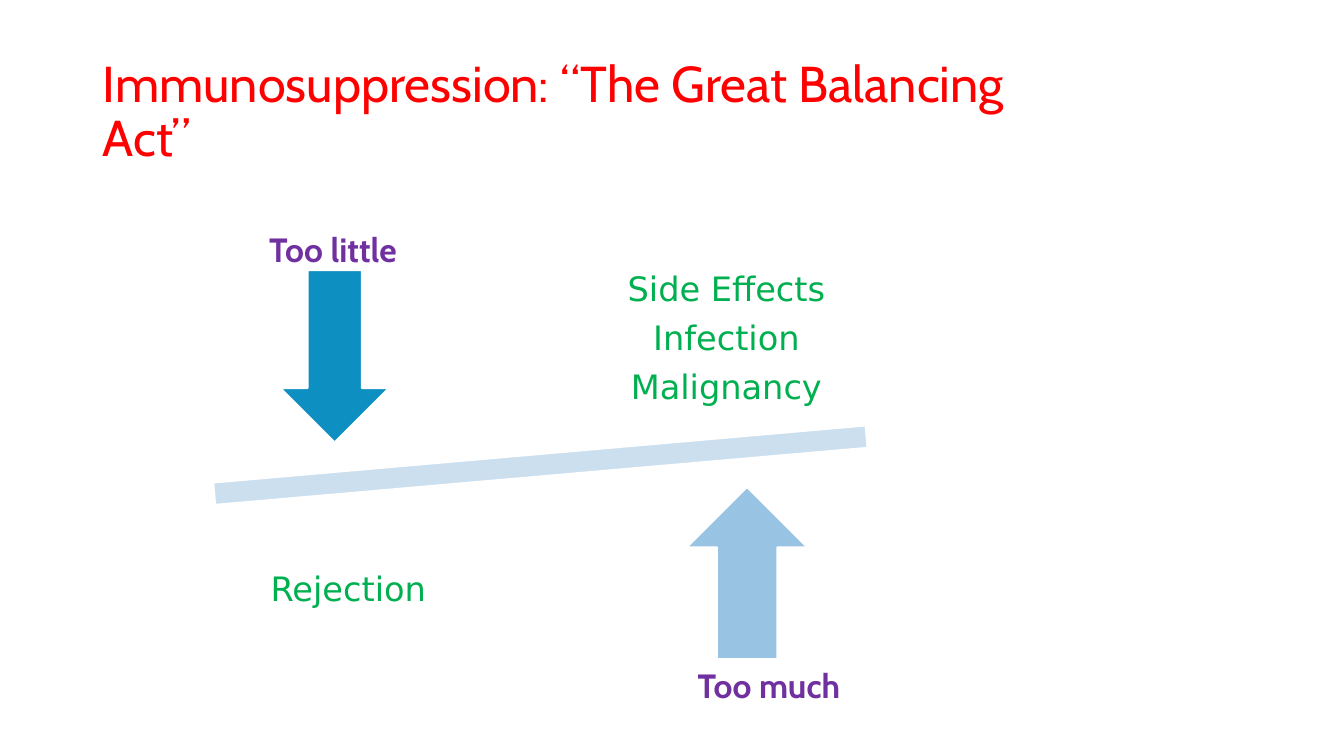
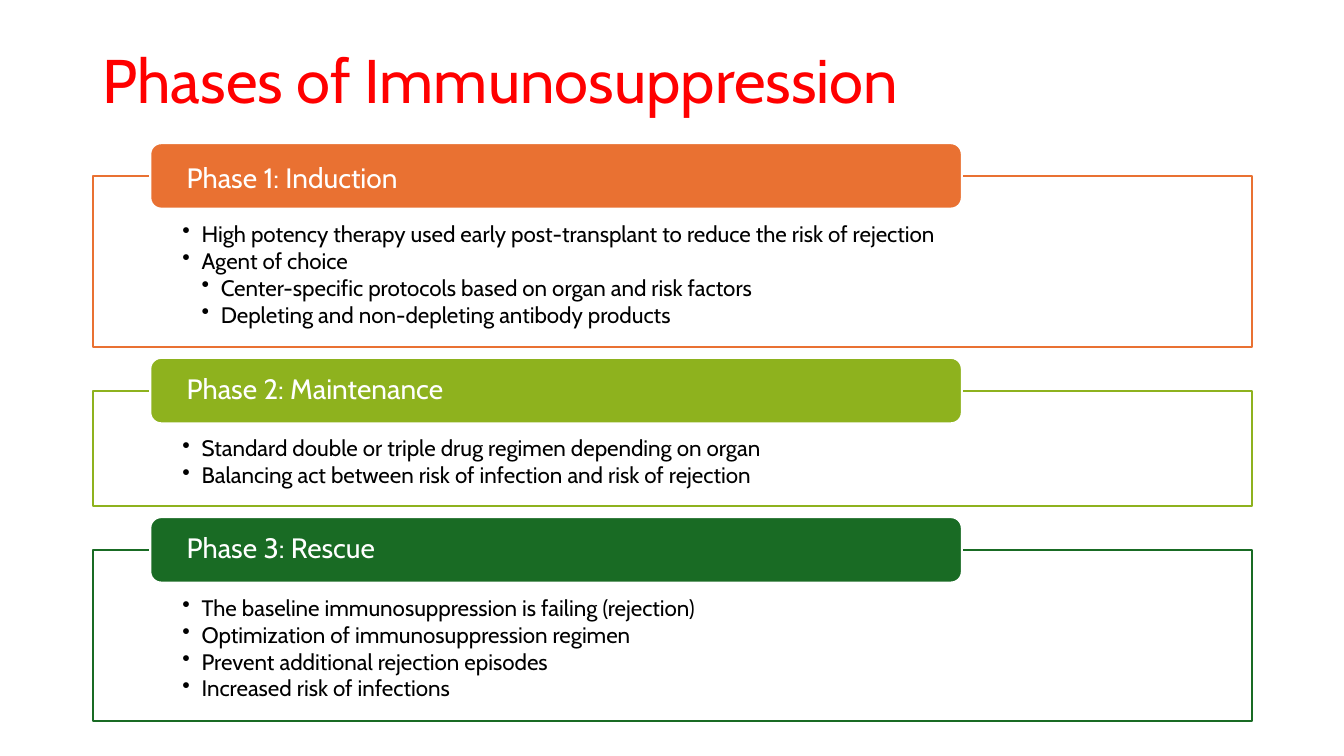
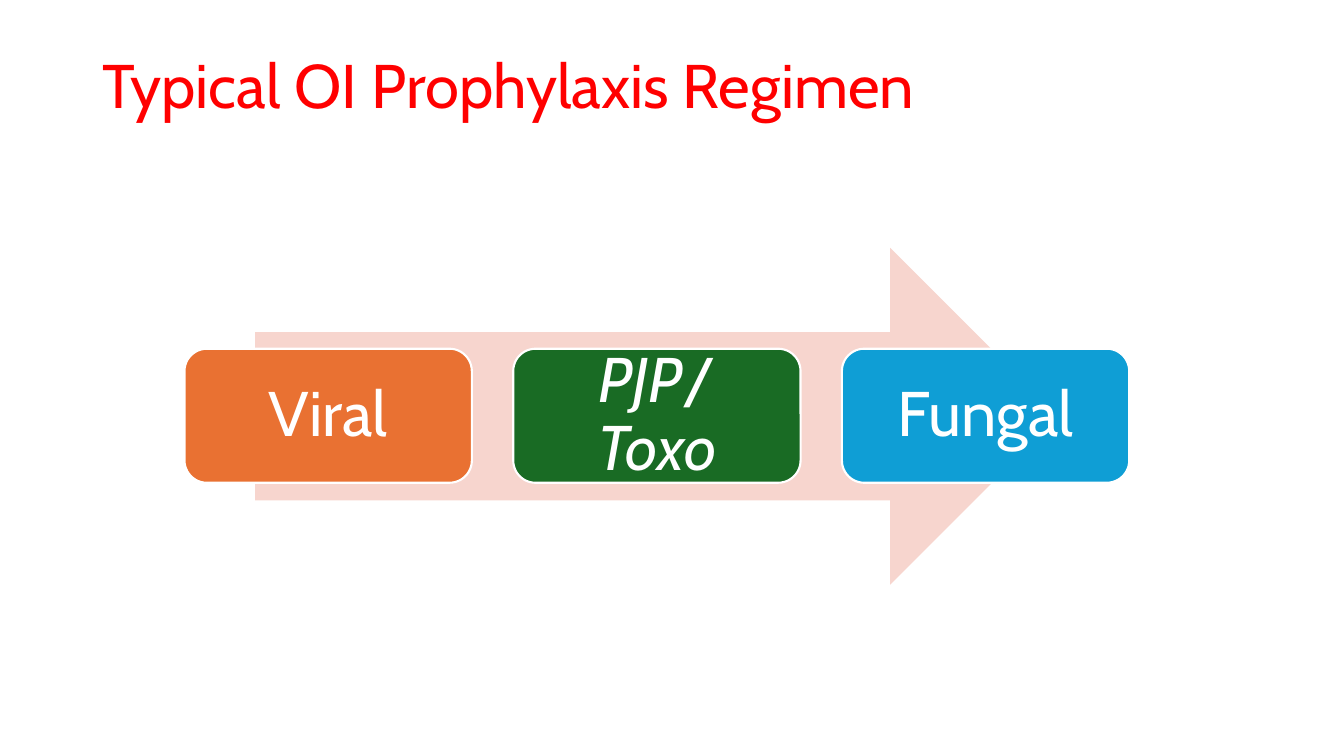
from lxml import etree
from pptx import Presentation
from pptx import util as u
from pptx.dml.color import RGBColor
from pptx.enum import shapes, text
from pptx.oxml import ns

PX = 9144
SLIDE_W, SLIDE_H = 1333, 750
RED = RGBColor(0xFF, 0x00, 0x00)
WHITE = RGBColor(0xFF, 0xFF, 0xFF)
BLACK = RGBColor(0x00, 0x00, 0x00)
GREEN = RGBColor(0x00, 0xB0, 0x50)
PURPLE = RGBColor(0x70, 0x30, 0xA0)
ORANGE = RGBColor(0xE9, 0x71, 0x32)
LIME = RGBColor(0x8E, 0xB2, 0x1E)
FOREST = RGBColor(0x19, 0x6B, 0x24)
SKY = RGBColor(0x0F, 0x9E, 0xD5)
DEEP_BLUE = RGBColor(0x0E, 0x8F, 0xC1)
SOFT_BLUE = RGBColor(0x98, 0xC3, 0xE2)
PALE_BLUE = RGBColor(0xCC, 0xDF, 0xEF)
PINK = RGBColor(0xF7, 0xD5, 0xCE)
FONT, PLAIN_FONT = "Cabin", "DejaVu Sans"
PRESET, ALIGN, ANCHOR = shapes.MSO_SHAPE, text.PP_ALIGN, text.MSO_ANCHOR
BULLET_INDENT = 19


def px(*lengths):
    """Turn px lengths into EMU."""
    return [u.Emu(length * PX) for length in lengths]


def add_bullet(paragraph, level):
    """Give a paragraph a hanging bullet at the given level."""
    step = BULLET_INDENT * PX
    paragraph.level = level
    properties = paragraph._p.get_or_add_pPr()
    properties.set("marL", str(step * level))
    properties.set("indent", str(-step))
    etree.SubElement(properties, ns.qn("a:buChar")).set("char", "•")


def write(holder, paragraphs, size=24, color=BLACK, font=FONT, bold=False,
          align=ALIGN.LEFT, anchor=ANCHOR.MIDDLE, insets=(10, 5, 10, 5),
          spacing=0.9, after=0, wrap=True, levels=()):
    """Write paragraphs, each a string or a list of (string, format) runs."""
    frame = holder.text_frame
    frame.word_wrap = wrap
    frame.vertical_anchor = anchor
    (frame.margin_left, frame.margin_top,
     frame.margin_right, frame.margin_bottom) = px(*insets)
    for index, content in enumerate(paragraphs):
        paragraph = frame.add_paragraph() if index else frame.paragraphs[0]
        paragraph.alignment = align
        paragraph.line_spacing = spacing
        paragraph.space_after = u.Pt(after)
        if levels:
            add_bullet(paragraph, levels[index])
        runs = [(content, {})] if isinstance(content, str) else content
        for words, extra in runs:
            run = paragraph.add_run()
            run.text = words
            run.font.name = font
            run.font.size = u.Pt(extra.get("size", size))
            run.font.bold = bold
            run.font.italic = extra.get("italic", False)
            run.font.color.rgb = color


def add_label(slide, box, paragraphs, **style):
    """Add a text box."""
    write(slide.shapes.add_textbox(*px(*box)), paragraphs, **style)


def add_block(slide, preset, box, fill, line=WHITE, rotation=0):
    """Add a flat preset shape, outlined unless line is None."""
    block = slide.shapes.add_shape(preset, *px(*box))
    block.shadow.inherit = False
    block.rotation = rotation
    block.fill.solid()
    block.fill.fore_color.rgb = fill
    if line is None:
        block.line.fill.background()
    else:
        block.line.color.rgb = line
        block.line.width = u.Pt(1.5)
    return block


def add_titled_slide(deck, title, box, size=44):
    """Add a blank slide with the shared red title."""
    slide = deck.slides.add_slide(deck.slide_layouts[6])
    add_label(slide, box, [title], size=size, color=RED)
    return slide


def add_balance(slide, left, top):
    """Draw the tilted beam, its two arrows and their captions."""
    effect = dict(font=PLAIN_FONT, color=GREEN, align=ALIGN.CENTER,
                  insets=(19,) * 4, after=9)
    dose = dict(color=PURPLE, bold=True, spacing=1, wrap=False,
                anchor=ANCHOR.TOP)
    add_block(slide, PRESET.MATH_MINUS, (left, top + 192, 884, 95),
              PALE_BLUE, rotation=355)
    add_block(slide, PRESET.DOWN_ARROW, (left + 184, top + 46, 108, 171),
              DEEP_BLUE)
    add_block(slide, PRESET.UP_ARROW, (left + 587, top + 261, 120, 171),
              SOFT_BLUE)
    add_label(slide, (left + 484, top + 25, 285, 180),
              ["Side Effects", "Infection", "Malignancy"], **effect)
    add_label(slide, (left + 109, top + 274, 285, 180), ["Rejection"],
              **effect)
    add_label(slide, (left + 163, top, 151, 50), ["Too little"], **dose)
    add_label(slide, (left + 588, top + 433, 166, 50), ["Too much"], **dose)


def add_phase(slide, box, heading, color, points, levels):
    """Draw a framed bullet list with a heading tab over its top edge."""
    left, top, width, height = box
    frame = add_block(slide, PRESET.RECTANGLE, box, WHITE, line=color)
    write(frame, points, size=16, anchor=ANCHOR.TOP,
          insets=(89, 46, 89, 12), after=2, levels=levels)
    tab = add_block(slide, PRESET.ROUNDED_RECTANGLE,
                    (left + 57, top - 33, width * 7 // 10, 65), color)
    write(tab, [heading], size=20, color=WHITE, insets=(33, 0, 33, 0))


def add_phases(slide, left, top, width, gap, phases):
    """Stack the phases with equal gaps."""
    for height, heading, color, points, levels in phases:
        add_phase(slide, (left, top, width, height), heading, color, points,
                  levels)
        top += height + gap


def add_regimen(slide, box, steps):
    """Draw a wide arrow with evenly spaced steps across its middle."""
    left, top, width, height = box
    step_w, step_h, pitch = 285, 133, 326
    add_block(slide, PRESET.RIGHT_ARROW, box, PINK, line=None)
    for index, (label, color) in enumerate(steps):
        step = add_block(slide, PRESET.ROUNDED_RECTANGLE,
                         (left - 70 + index * pitch,
                          top + (height - step_h) // 2, step_w, step_h),
                         color)
        write(step, [label], size=45, color=WHITE, align=ALIGN.CENTER,
              insets=(25,) * 4)


def main():
    """Build the deck."""
    deck = Presentation()
    deck.slide_width, deck.slide_height = px(SLIDE_W, SLIDE_H)

    balance = add_titled_slide(
        deck, "Immunosuppression: “The Great Balancing Act”",
        (92, 80, 989, 65), size=36)
    add_balance(balance, 94, 222)

    phases = add_titled_slide(deck, "Phases of Immunosuppression",
                              (92, 40, 1150, 85))
    add_phases(phases, 92, 175, 1150, 44, [
        (169, [("Phase 1: Induction", {}), (" ", {"size": 28})], ORANGE,
         ["High potency therapy used early post-transplant to reduce the "
          "risk of rejection",
          "Agent of choice",
          "Center-specific protocols based on organ and risk factors",
          "Depleting and non-depleting antibody products"], (1, 1, 2, 2)),
        (114, "Phase 2: Maintenance", LIME,
         ["Standard double or triple drug regimen depending on organ",
          "Balancing act between risk of infection and risk of rejection"],
         (1, 1)),
        (169, "Phase 3: Rescue", FOREST,
         ["The baseline immunosuppression is failing (rejection)",
          "Optimization of immunosuppression regimen",
          "Prevent additional rejection episodes",
          "Increased risk of infections"], (1, 1, 1, 1)),
    ])

    regimen = add_titled_slide(deck, "Typical OI Prophylaxis Regimen",
                               (92, 40, 1150, 96))
    italic = {"italic": True}
    add_regimen(regimen, (253, 246, 797, 334), [
        ("Viral", ORANGE),
        ([("PJP", italic), ("/", {}), ("Toxo", italic)], FOREST),
        ("Fungal", SKY),
    ])
    deck.save("out.pptx")


if __name__ == "__main__":
    main()
